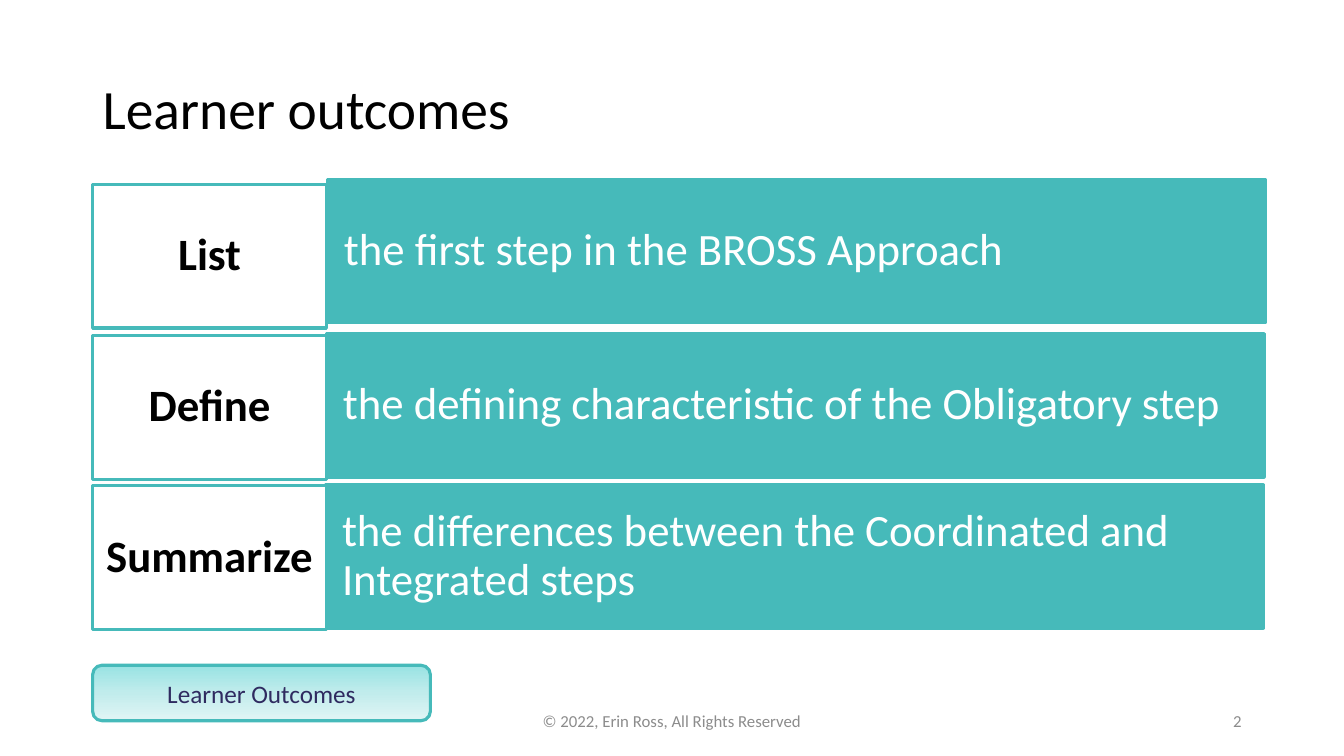
import copy
import pptx
import pptx.util
import pptx.dml.color
import pptx.enum.shapes
import pptx.enum.text

Pt = pptx.util.Pt
Kind = pptx.enum.shapes.MSO_SHAPE
Align = pptx.enum.text.PP_ALIGN
TEAL = "46BABA"


def color(code):
    return pptx.dml.color.RGBColor.from_string(code)


def write(shape, text, size, code, align=Align.LEFT, bold=False,
          pad=(7.2, 3.6), space=1.0):
    frame = shape.text_frame
    frame.word_wrap = True
    frame.vertical_anchor = pptx.enum.text.MSO_ANCHOR.MIDDLE
    frame.margin_left = frame.margin_right = Pt(pad[0])
    frame.margin_top = frame.margin_bottom = Pt(pad[1])
    para = frame.paragraphs[0]
    para.alignment = align
    para.line_spacing = space
    run = para.add_run()
    run.text = text
    run.font.name = "Calibri"
    run.font.size = Pt(size)
    run.font.bold = bold
    run.font.color.rgb = color(code)


deck = pptx.Presentation()
deck.slide_width, deck.slide_height = Pt(960), Pt(540)
slide = deck.slides.add_slide(deck.slide_layouts[6])
shapes = slide.shapes

# Title
title = shapes.add_textbox(Pt(66.2), Pt(53.3), Pt(828), Pt(53.3))
write(title, "Learner outcomes", 39.6, "000000", space=0.9)

# Outcome rows: verb, its top, detail, its left and top
rows = [
    ("List", 131.8, "the first step in the BROSS Approach", 234, 128.2),
    ("Define", 239.8, "the defining characteristic of the Obligatory step",
     233.3, 238.3),
    ("Summarize", 347,
     "the differences between the Coordinated and Integrated steps",
     232.6, 346.3),
]
for verb, top, detail, left, rise in rows:
    bar = shapes.add_shape(Kind.RECTANGLE, Pt(left), Pt(rise), Pt(669.6), Pt(102.5))
    box = shapes.add_shape(Kind.RECTANGLE, Pt(66.2), Pt(top), Pt(167), Pt(102.5))
    for shape, fill in ((bar, TEAL), (box, "FFFFFF")):
        shape.shadow.inherit = False
        shape.fill.solid()
        shape.fill.fore_color.rgb = color(fill)
        shape.line.color.rgb = color(TEAL)
        shape.line.width = Pt(2.25)
    write(bar, detail, 32, "FFFFFF", pad=(11.7, 23.6), space=0.9)
    write(box, verb, 32, "000000", Align.CENTER, True, (8, 9.4), 0.9)

# Footer and slide number
footer = shapes.add_textbox(Pt(318), Pt(500.5), Pt(324), Pt(28.8))
write(footer, "© 2022, Erin Ross, All Rights Reserved", 12, "8C8C8C", Align.CENTER)
number = shapes.add_textbox(Pt(678), Pt(500.5), Pt(216), Pt(28.8))
write(number, "2", 12, "8C8C8C", Align.RIGHT)

# Section tag with a three-stop gradient
tag = shapes.add_shape(Kind.ROUNDED_RECTANGLE, Pt(66.2), Pt(475.2), Pt(241.2), Pt(39.6))
tag.shadow.inherit = False
tag.line.color.rgb = color(TEAL)
tag.line.width = Pt(2.25)
tag.fill.gradient()
tag.fill.gradient_angle = 270
first = tag._element.spPr.find(".//" + pptx.oxml.ns.qn("a:gs"))
first.addnext(copy.deepcopy(first))
stops = ((0, "98E3E3"), (0.5, "C1ECEC"), (1, "E1F5F5"))
for stop, (place, code) in zip(tag.fill.gradient_stops, stops):
    stop.position = place
    stop.color.rgb = color(code)
write(tag, "Learner Outcomes", 18, "2F2B60", Align.CENTER)

deck.save("out.pptx")
